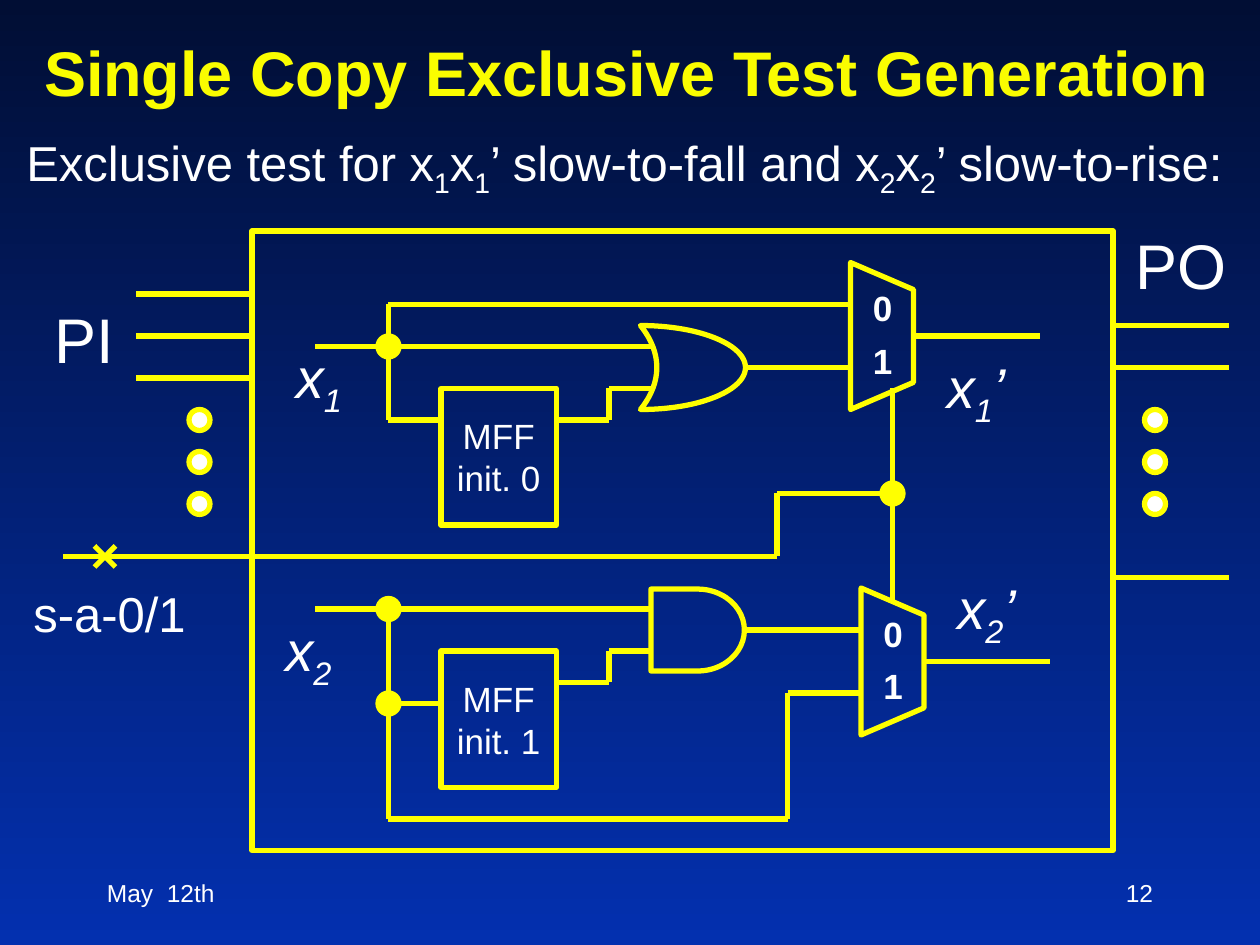
from collections import namedtuple
from itertools import pairwise

from lxml.etree import SubElement
from pptx import Presentation
from pptx.dml.color import RGBColor
from pptx.enum.shapes import MSO_CONNECTOR, MSO_SHAPE as SHAPE
from pptx.enum.text import MSO_ANCHOR as ANCHOR, MSO_AUTO_SIZE as AUTO_SIZE, PP_ALIGN as ALIGN
from pptx.oxml.ns import qn
from pptx.util import Pt

COLORS = {"top": "010E34", "bottom": "0330AF", "title": "FAFD00",
          "wire": "FFFF00", "text": "FFFFFF"}
FONT = "Arial"
LINE_WIDTH = 3
NODE_SIZE = 12
PITCH = 24

Box = namedtuple("Box", "left top width height")


def color(name):
    return RGBColor.from_string(COLORS[name])


def inside(box, left, top, width, height):
    return Box(box.left + left, box.top + top, width, height)


def lengths(box):
    return [Pt(value) for value in box]


def format_runs(para, size, ink="text", bold=False, italic=False):
    for span in para.runs:
        font = span.font
        font.name, font.size, font.bold, font.italic = FONT, Pt(size), bold, italic
        font.color.rgb = color(ink)


def write_formula(para, text, size, italic=False):
    for index, piece in enumerate(text.split("_")):
        span = para.add_run()
        span.text = piece
        if index % 2:
            span.font._element.set("baseline", "-25000")
    format_runs(para, size, italic=italic)


def add_label(page, box, text, size, italic=False, align=ALIGN.LEFT, anchor=ANCHOR.TOP):
    frame = page.shapes.add_textbox(*lengths(box)).text_frame
    frame.word_wrap = True
    frame.vertical_anchor = anchor
    para = frame.paragraphs[0]
    para.alignment = align
    write_formula(para, text, size, italic)


def add_outline(page, preset, box, fill=None):
    shape = page.shapes.add_shape(preset, *lengths(box))
    shape.shadow.inherit = False
    if fill:
        shape.fill.solid()
        shape.fill.fore_color.rgb = color(fill)
    else:
        shape.fill.background()
    shape.line.color.rgb = color("wire")
    shape.line.width = Pt(LINE_WIDTH)
    return shape


def add_wire(page, box, *points):
    for (x1, y1), (x2, y2) in pairwise(points):
        ends = (box.left + x1, box.top + y1, box.left + x2, box.top + y2)
        wire = page.shapes.add_connector(MSO_CONNECTOR.STRAIGHT, *lengths(ends))
        wire.line.color.rgb = color("wire")
        wire.line.width = Pt(LINE_WIDTH)
        SubElement(wire._element.spPr, qn("a:effectLst"))


def add_node(page, box, x, y, fill="wire"):
    half = NODE_SIZE / 2
    add_outline(page, SHAPE.FLOWCHART_CONNECTOR,
                inside(box, x - half, y - half, NODE_SIZE, NODE_SIZE), fill)


def add_mux(page, box):
    middle_x, middle_y = box.left + box.width / 2, box.top + box.height / 2
    turned = Box(middle_x - box.height / 2, middle_y - box.width / 2, box.height, box.width)
    mux = add_outline(page, SHAPE.TRAPEZOID, turned)
    mux.rotation = 90
    mux.adjustments[0] = 0.43
    frame = mux.text_frame
    frame.text = "0\n1"
    frame.vertical_anchor = ANCHOR.TOP
    frame._txBody.bodyPr.set("vert", "vert270")
    for para in frame.paragraphs:
        para.alignment = ALIGN.LEFT
        para._p.get_or_add_pPr().set("marL", str(Pt(5.6)))
        format_runs(para, 20, bold=True)
    frame.paragraphs[1].space_before = Pt(6)


def add_flip_flop(page, box, text):
    frame = add_outline(page, SHAPE.RECTANGLE, box).text_frame
    frame.text = text
    frame.word_wrap = True
    frame.paragraphs[0].alignment = ALIGN.CENTER
    format_runs(frame.paragraphs[0], 20)


def add_input_stage(page, box, flip_flop, branch_y):
    add_wire(page, box, (24, 48), (216, 48))
    add_node(page, box, 66, 48)
    add_flip_flop(page, inside(box, 96, 72, 66, 78), flip_flop)
    add_wire(page, box, (66, branch_y), (96, branch_y))
    add_wire(page, box, (162, 90), (192, 90), (192, 72), (216, 72))


def add_fall_circuit(page, box):
    add_input_stage(page, box, "MFF init. 0", 90)
    gate = add_outline(page, SHAPE.MOON, inside(box, 210, 36, 60, 48))
    gate.adjustments[0] = 0.844
    gate._element.spPr.get_or_add_xfrm().set("flipH", "1")
    add_wire(page, box, (270, 60), (330, 60))
    add_wire(page, box, (66, 90), (66, 24), (330, 24))
    add_mux(page, inside(box, 330, 0, 36, 84))
    add_wire(page, box, (366, 42), (438, 42))
    add_label(page, inside(box, 6, 42, 60, 46), "x_1", 32, italic=True)
    add_label(page, inside(box, 378, 48, 54, 46), "x_1_’", 32, italic=True)


def add_rise_circuit(page, box):
    add_input_stage(page, box, "MFF init. 1", 102)
    add_outline(page, SHAPE.FLOWCHART_DELAY, inside(box, 216, 36.6, 53.4, 46.8))
    add_wire(page, box, (270, 60), (336, 60))
    add_node(page, box, 66, 102)
    add_wire(page, box, (66, 48), (66, 168), (294, 168), (294, 96), (336, 96))
    add_mux(page, inside(box, 336, 36, 36, 84))
    add_wire(page, box, (372, 78), (444, 78))
    add_label(page, inside(box, 0, 48, 48, 46), "x_2", 32, italic=True)
    add_label(page, inside(box, 384, 24, 54, 46), "x_2_’", 32, italic=True)


def add_select_line(page, box):
    add_wire(page, box, (24, 96), (432, 96), (432, 60), (498, 60))
    add_wire(page, box, (498, 0), (498, 121.4))
    add_node(page, box, 498, 60)
    add_wire(page, box, (42, 90), (54, 102))
    add_wire(page, box, (54, 90), (42, 102))
    add_label(page, inside(box, 0, 108, 104, 41), "s-a-0/1", 28)


def add_ports(page, box, text, label_box, wire_x, wire_rows, dot_x, dot_y):
    for y in wire_rows:
        add_wire(page, box, (wire_x, y), (wire_x + 66, y))
    for row in range(3):
        add_node(page, box, dot_x, dot_y + row * PITCH, "text")
    add_label(page, inside(box, *label_box), text, 36)


def add_header(page, box):
    title = page.shapes.title
    title.left, title.top, title.width, title.height = lengths(inside(box, 18, 18, 684, 48))
    frame = title.text_frame
    frame.text = "Single Copy Exclusive Test Generation"
    frame.auto_size = AUTO_SIZE.NONE
    frame.vertical_anchor = ANCHOR.BOTTOM
    frame.paragraphs[0].alignment = ALIGN.LEFT
    format_runs(frame.paragraphs[0], 36, "title", bold=True)
    add_label(page, inside(box, 8, 72, 712, 41),
              "Exclusive test for x_1_x_1_’ slow-to-fall and x_2_x_2_’ slow-to-rise:", 28)


def add_footer(page, box):
    add_label(page, inside(box, 0, 0, 150, 36), "May  12th", 14, anchor=ANCHOR.MIDDLE)
    add_label(page, inside(box, box.width - 150, 0, 150, 36), "12", 14,
              align=ALIGN.RIGHT, anchor=ANCHOR.MIDDLE)


def paint_background(page):
    fill = page.background.fill
    fill.gradient()
    fill.gradient_angle = 270
    for stop, name in zip(fill.gradient_stops, ("top", "bottom")):
        stop.color.rgb = color(name)


def main():
    deck = Presentation()
    deck.slide_width, deck.slide_height = Pt(720), Pt(540)
    page = deck.slides.add_slide(deck.slide_layouts[5])
    paint_background(page)
    add_header(page, Box(0, 0, 720, 114))
    add_outline(page, SHAPE.RECTANGLE, Box(144, 132, 492, 354))
    add_fall_circuit(page, Box(156, 150, 444, 168))
    add_rise_circuit(page, Box(156, 300, 444, 168))
    add_select_line(page, Box(12, 222, 504, 150))
    add_ports(page, Box(24, 168, 120, 126), "PI", (0, 0, 54, 51), 54, (0, 24, 48), 90, 72)
    add_ports(page, Box(636, 126, 84, 204), "PO", (6, 0, 78, 51), 0, (60, 84, 204), 24, 114)
    add_footer(page, Box(54, 492, 612, 36))
    deck.save("out.pptx")


if __name__ == "__main__":
    main()
